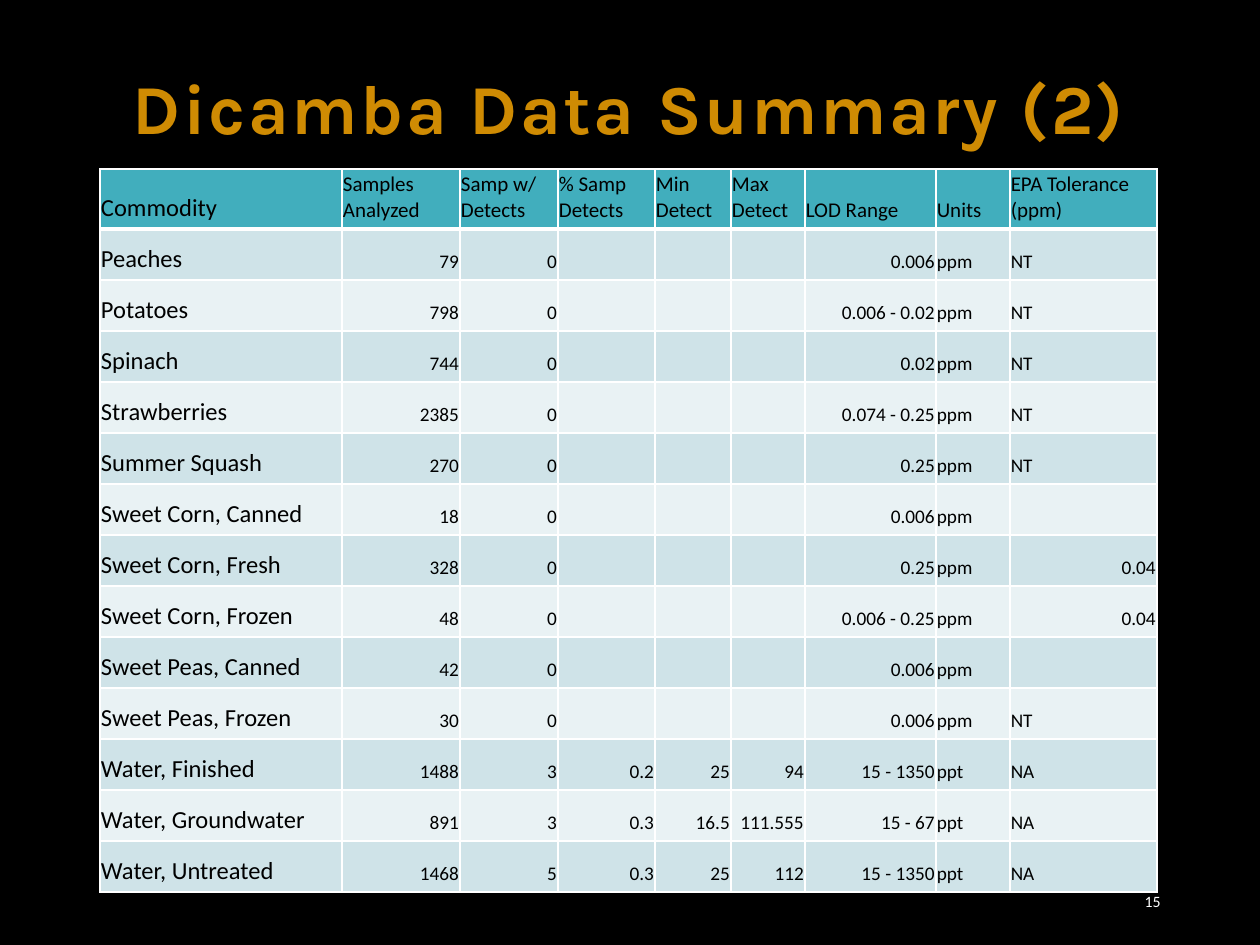
import dataclasses
import typing

import lxml.etree
import pptx
import pptx.dml.color
import pptx.enum.text
import pptx.oxml.ns
import pptx.util

SCALE = 914400 / 126
COLORS = {
    "background": "000000",
    "title": "CF8B03",
    "header": "41AEBD",
    "odd": "CFE3E8",
    "even": "E9F2F4",
    "text": "000000",
    "white": "FFFFFF",
}
ALIGN = pptx.enum.text.PP_ALIGN
MIDDLE = pptx.enum.text.MSO_ANCHOR.MIDDLE
BOTTOM = pptx.enum.text.MSO_ANCHOR.BOTTOM


@dataclasses.dataclass
class Box:
    left: int
    top: int
    width: int
    height: int


@dataclasses.dataclass
class Sample:
    commodity: str
    analyzed: str
    detects: str
    lod_range: str
    units: str
    tolerance: str
    percent: str = ""
    min_detect: str = ""
    max_detect: str = ""

    def cells(self) -> list[str]:
        return [self.commodity, self.analyzed, self.detects, self.percent, self.min_detect,
                self.max_detect, self.lod_range, self.units, self.tolerance]


TITLE_BOX = Box(101, 21, 1056, 186)
TABLE_BOX = Box(100, 169, 1057, 723)
NUMBER_BOX = Box(890, 876, 283, 50)
COLUMN_WIDTHS = [242, 118, 98, 97, 76, 74, 131, 74, 147]
HEADER_HEIGHT = 60
ROW_HEIGHT = 51
HEADERS = ["Commodity", "Samples Analyzed", "Samp w/ Detects", "% Samp Detects", "Min Detect",
           "Max Detect", "LOD Range", "Units", "EPA Tolerance (ppm)"]
SAMPLES = [
    Sample("Peaches", "79", "0", "0.006", "ppm", "NT"),
    Sample("Potatoes", "798", "0", "0.006 - 0.02", "ppm", "NT"),
    Sample("Spinach", "744", "0", "0.02", "ppm", "NT"),
    Sample("Strawberries", "2385", "0", "0.074 - 0.25", "ppm", "NT"),
    Sample("Summer Squash", "270", "0", "0.25", "ppm", "NT"),
    Sample("Sweet Corn, Canned", "18", "0", "0.006", "ppm", ""),
    Sample("Sweet Corn, Fresh", "328", "0", "0.25", "ppm", "0.04"),
    Sample("Sweet Corn, Frozen", "48", "0", "0.006 - 0.25", "ppm", "0.04"),
    Sample("Sweet Peas, Canned", "42", "0", "0.006", "ppm", ""),
    Sample("Sweet Peas, Frozen", "30", "0", "0.006", "ppm", "NT"),
    Sample("Water, Finished", "1488", "3", "15 - 1350", "ppt", "NA", "0.2", "25", "94"),
    Sample("Water, Groundwater", "891", "3", "15 - 67", "ppt", "NA", "0.3", "16.5", "111.555"),
    Sample("Water, Untreated", "1468", "5", "15 - 1350", "ppt", "NA", "0.3", "25", "112"),
]


def px(length: int) -> pptx.util.Emu:
    return pptx.util.Emu(round(length * SCALE))


def rgb(name: str) -> pptx.dml.color.RGBColor:
    return pptx.dml.color.RGBColor.from_string(COLORS[name])


def set_attrs(target: typing.Any, values: dict[str, typing.Any]) -> None:
    for name, value in values.items():
        setattr(target, name, value)


def position(box: Box) -> dict[str, pptx.util.Emu]:
    return {name: px(value) for name, value in dataclasses.asdict(box).items()}


def write(p: typing.Any, text: str, font: str, size: int, color: str,
          align: typing.Any, bold: bool = False) -> typing.Any:
    p.alignment = align
    r = p.add_run()
    r.text = text
    set_attrs(r.font, {"name": font, "size": pptx.util.Pt(size), "bold": bold})
    r.font.color.rgb = rgb(color)
    return r


def add_borders(cell: typing.Any, bottom: int) -> None:
    tc_pr = cell._tc.get_or_add_tcPr()
    for side, points in {"L": 1, "R": 1, "T": 1, "B": bottom}.items():
        ln = lxml.etree.SubElement(tc_pr, pptx.oxml.ns.qn(f"a:ln{side}"),
                                   w=str(pptx.util.Pt(points)))
        fill = lxml.etree.SubElement(ln, pptx.oxml.ns.qn("a:solidFill"))
        lxml.etree.SubElement(fill, pptx.oxml.ns.qn("a:srgbClr"), val=COLORS["white"])


def fill_cell(cell: typing.Any, text: str, size: int, color: str, bottom: int) -> None:
    set_attrs(cell, {"margin_left": px(1), "margin_right": px(1), "margin_top": px(1),
                     "margin_bottom": px(6), "vertical_anchor": BOTTOM})
    add_borders(cell, bottom)
    cell.fill.solid()
    cell.fill.fore_color.rgb = rgb(color)
    if text:
        align = ALIGN.RIGHT if text[0].isdigit() else ALIGN.LEFT
        write(cell.text_frame.paragraphs[0], text, "Calibri", size, "text", align)


def add_title(s: typing.Any) -> None:
    sp = s.shapes.title
    set_attrs(sp, position(TITLE_BOX))
    tf = sp.text_frame
    set_attrs(tf, {"word_wrap": True, "vertical_anchor": MIDDLE,
                   "auto_size": pptx.enum.text.MSO_AUTO_SIZE.NONE})
    p = tf.paragraphs[0]
    p.line_spacing = 0.8
    r = write(p, "Dicamba Data Summary (2)", "Karla", 40, "title", ALIGN.CENTER, True)
    r.font._element.set("spc", "150")


def add_data_table(s: typing.Any) -> None:
    rows = [HEADERS] + [sample.cells() for sample in SAMPLES]
    table = s.shapes.add_table(len(rows), len(HEADERS), **position(TABLE_BOX)).table
    for column, width in zip(table.columns, COLUMN_WIDTHS):
        column.width = px(width)
    for i, values in enumerate(rows):
        table.rows[i].height = px(ROW_HEIGHT if i else HEADER_HEIGHT)
        color = ("odd" if i % 2 else "even") if i else "header"
        for j, text in enumerate(values):
            size = 14 if j == 0 else 11 if i else 12
            fill_cell(table.cell(i, j), text, size, color, 1 if i else 3)


def add_slide_number(s: typing.Any) -> None:
    tf = s.shapes.add_textbox(**position(NUMBER_BOX)).text_frame
    set_attrs(tf, {"word_wrap": True, "vertical_anchor": MIDDLE})
    write(tf.paragraphs[0], "15", "Calibri", 9, "white", ALIGN.RIGHT)


def main() -> None:
    prs = pptx.Presentation()
    set_attrs(prs, {"slide_width": px(1260), "slide_height": px(945)})
    s = prs.slides.add_slide(prs.slide_layouts[5])
    s.background.fill.solid()
    s.background.fill.fore_color.rgb = rgb("background")
    add_slide_number(s)
    add_title(s)
    add_data_table(s)
    prs.save("out.pptx")


if __name__ == "__main__":
    main()
